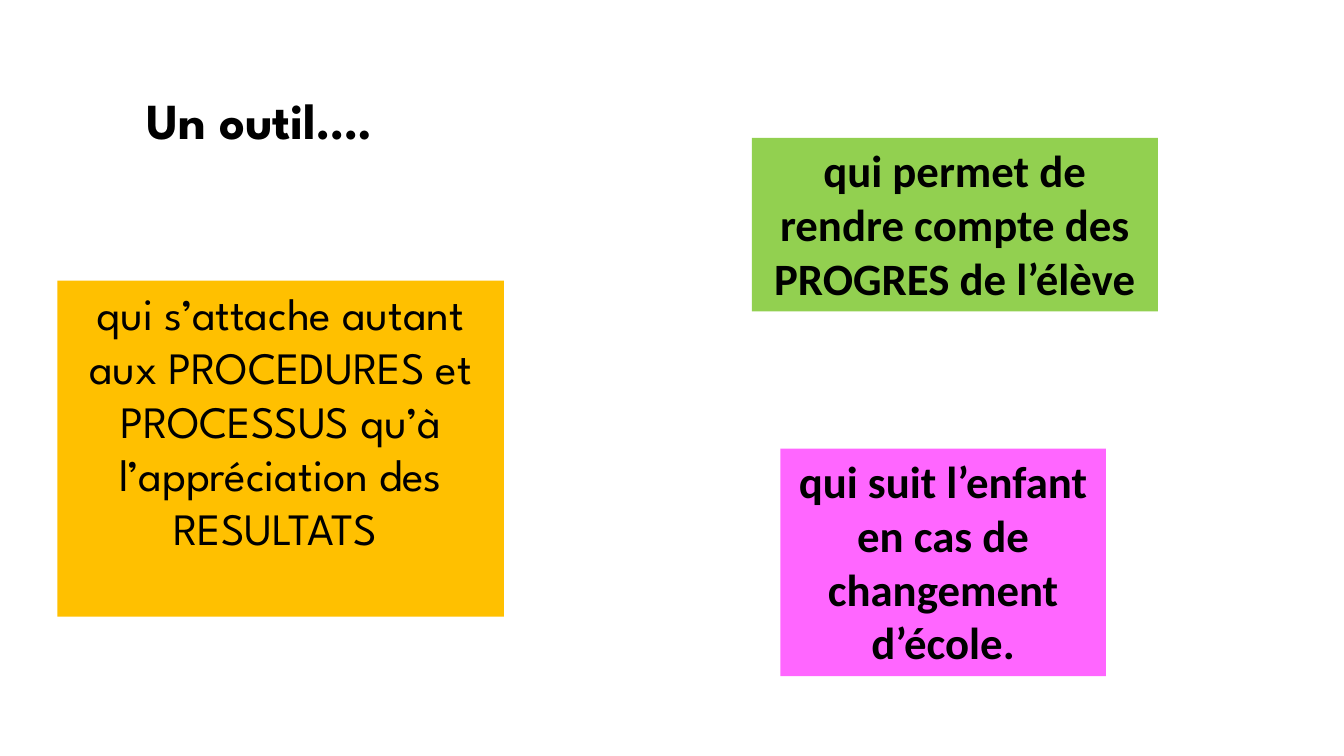
from pptx import Presentation
from pptx import util as u
from pptx.dml.color import RGBColor
from pptx.enum import shapes, text

BLACK = RGBColor(0x00, 0x00, 0x00)
GREEN = RGBColor(0x92, 0xD0, 0x50)
PINK = RGBColor(0xFF, 0x66, 0xFF)
AMBER = RGBColor(0xFF, 0xC0, 0x00)

# Content: text, (left, top, width, height) in points, font, bold, fill
TITLE = "Un outil…."
TITLE_BOX = (81.5, 60, 208, 51)
QUALITIES = [
    ("qui permet de rendre compte des PROGRES de l’élève",
     (537, 98.5, 290, 124), "Calibri", True, GREEN),
    ("qui suit l’enfant en cas de changement d’école.",
     (557.5, 320.5, 232.5, 162.5), "Calibri", True, PINK),
    ("qui s’attache autant aux PROCEDURES et PROCESSUS qu’à "
     "l’appréciation des RESULTATS ",
     (41, 200.5, 319, 240), "League Spartan", False, AMBER),
]


def write(sp, words, font, size, bold):
    tf = sp.text_frame
    tf.text = words
    tf.word_wrap = True
    tf.auto_size = text.MSO_AUTO_SIZE.NONE
    tf.vertical_anchor = text.MSO_ANCHOR.TOP
    p = tf.paragraphs[0]
    p.alignment = text.PP_ALIGN.CENTER
    f = p.runs[0].font
    f.name, f.size, f.bold = font, u.Pt(size), bold
    f.color.rgb = BLACK


def main():
    prs = Presentation()
    prs.slide_width, prs.slide_height = u.Pt(960), u.Pt(540)
    s = prs.slides.add_slide(prs.slide_layouts[5])

    # Title
    title = s.shapes.title
    title.left, title.top, title.width, title.height = map(u.Pt, TITLE_BOX)
    write(title, TITLE, "League Spartan", 36, True)

    # Coloured boxes
    for words, box, font, bold, fill in QUALITIES:
        sp = s.shapes.add_shape(shapes.MSO_SHAPE.RECTANGLE, *map(u.Pt, box))
        sp.shadow.inherit = False
        sp.fill.solid()
        sp.fill.fore_color.rgb = fill
        sp.line.fill.background()
        write(sp, words, font, 32, bold)

    prs.save("out.pptx")


if __name__ == "__main__":
    main()
